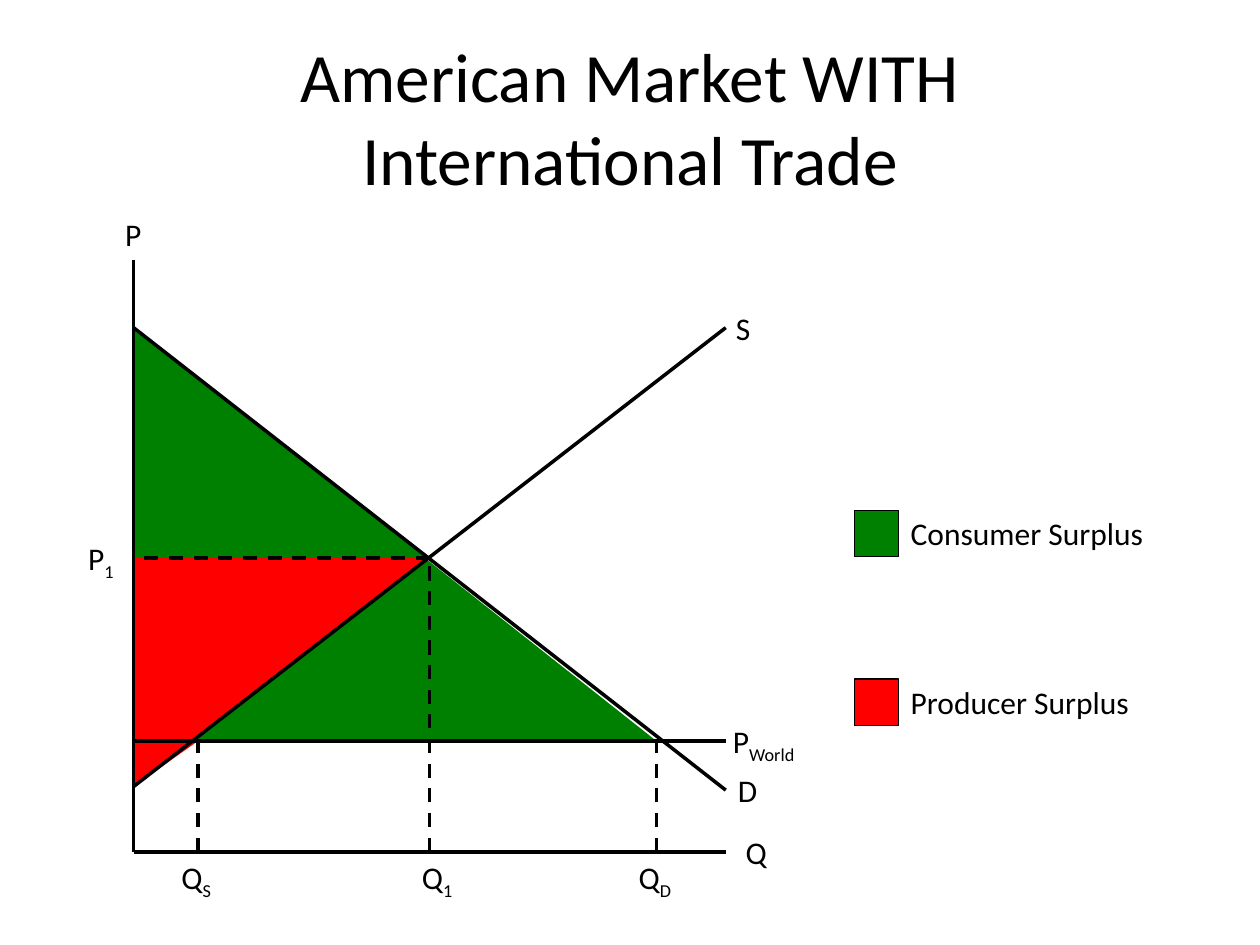
from dataclasses import dataclass

from lxml import etree
from pptx import Presentation
from pptx.dml.color import RGBColor
from pptx.enum.dml import MSO_LINE
from pptx.enum.shapes import MSO_CONNECTOR, MSO_SHAPE
from pptx.enum.text import MSO_ANCHOR, MSO_AUTO_SIZE, PP_ALIGN
from pptx.oxml.ns import qn
from pptx.util import Inches, Pt

RIGHT_TRIANGLE = MSO_SHAPE.RIGHT_TRIANGLE
RECTANGLE = MSO_SHAPE.RECTANGLE
STRAIGHT = MSO_CONNECTOR.STRAIGHT
DASH = MSO_LINE.DASH
MIDDLE = MSO_ANCHOR.MIDDLE
CENTER = PP_ALIGN.CENTER
FIT_SHAPE = MSO_AUTO_SIZE.SHAPE_TO_FIT_TEXT
TITLE_ONLY = 5


@dataclass(frozen=True)
class Theme:
    ink: RGBColor = RGBColor(0, 0, 0)
    consumer: RGBColor = RGBColor(0, 128, 0)
    producer: RGBColor = RGBColor(255, 0, 0)
    font: str = "Calibri"
    title_size: float = 39.6
    label_size: float = 18
    curve_width: float = 2
    border_width: float = 0.75
    label_height: float = 0.4


THEME = Theme()


@dataclass(frozen=True)
class Box:
    left: float
    top: float
    width: float
    height: float

    def point(self, quantity, price):
        return self.left + quantity * self.width, self.top + (1 - price) * self.height

    def emu(self):
        return [Inches(value) for value in (self.left, self.top, self.width, self.height)]


def add_run(paragraph, text, size, subscript=False):
    run = paragraph.add_run()
    run.text = text
    run.font.name = THEME.font
    run.font.size = Pt(size)
    run.font.color.rgb = THEME.ink
    if subscript:
        run.font._element.set("baseline", "-25000")


def add_label(slide, box, text, subscript=""):
    frame = slide.shapes.add_textbox(*box.emu()).text_frame
    frame.word_wrap = False
    frame.auto_size = FIT_SHAPE
    paragraph = frame.paragraphs[0]
    add_run(paragraph, text, THEME.label_size)
    if subscript:
        add_run(paragraph, subscript, THEME.label_size, subscript=True)


def add_filled(slide, kind, box, color, border=False):
    shape = slide.shapes.add_shape(kind, *box.emu())
    shape.shadow.inherit = False
    shape.fill.solid()
    shape.fill.fore_color.rgb = color
    if border:
        shape.line.color.rgb = THEME.ink
        shape.line.width = Pt(THEME.border_width)
    else:
        shape.line.fill.background()
    return shape


def add_title(slide, box, lines):
    title = slide.shapes.title
    title.left, title.top, title.width, title.height = box.emu()
    title.text_frame.vertical_anchor = MIDDLE
    paragraph = title.text_frame.paragraphs[0]
    paragraph.alignment = CENTER
    for index, line in enumerate(lines):
        if index:
            paragraph.add_line_break()
        add_run(paragraph, line, THEME.title_size)


def add_market(slide, plot):
    low, high, middle, world = 0.11, 0.885, 0.496, 0.187
    supplied, demanded, traded = 0.109, 0.883, 0.5

    def surplus(corner_price, far_price, quantity, color):
        left, top = plot.point(0, max(corner_price, far_price))
        height = abs(corner_price - far_price) * plot.height
        box = Box(left, top, quantity * plot.width, height)
        triangle = add_filled(slide, RIGHT_TRIANGLE, box, color)
        if corner_price > far_price:
            triangle._element.spPr.find(qn("a:xfrm")).set("flipV", "1")

    def line(start, end, dashed=False):
        ends = [Inches(value) for value in plot.point(*start) + plot.point(*end)]
        connector = slide.shapes.add_connector(STRAIGHT, *ends)
        connector.line.color.rgb = THEME.ink
        connector.line.width = Pt(THEME.curve_width)
        if dashed:
            connector.line.dash_style = DASH
        etree.SubElement(connector._element.spPr, qn("a:effectLst"))

    def label(quantity, price, width, text, subscript=""):
        x, y = plot.point(quantity, price)
        height = THEME.label_height
        add_label(slide, Box(x - width / 2, y - height / 2, width, height), text, subscript)

    surplus(world, high, demanded, THEME.consumer)
    surplus(middle, low, traded, THEME.producer)
    surplus(world, low, supplied, THEME.producer)
    surplus(middle, high, traded, THEME.consumer)

    line((0, 1), (0, 0))
    line((1, 0), (0, 0))
    line((1, high), (0, low))
    line((1, 0.104), (0, high))
    line((1, world), (0, world))
    line((traded, middle), (0, middle), dashed=True)
    for quantity, price in ((traded, middle), (supplied, world), (demanded, world)):
        line((quantity, 0), (quantity, price), dashed=True)

    below = -0.043
    label(1.052, 0, 0.37, "Q")
    label(0, 1.043, 0.33, "P")
    label(1.038, 0.104, 0.36, "D")
    label(1.03, high, 0.32, "S")
    label(0.515, below, 0.46, "Q", "1")
    label(-0.053, middle, 0.42, "P", "1")
    label(1.072, world, 0.76, "P", "World")
    label(supplied, below, 0.46, "Q", "S")
    label(demanded, below, 0.48, "Q", "D")


def add_legend(slide, box, entries):
    swatch_width, swatch_height = 0.35, 0.37
    step = (box.height - swatch_height) / (len(entries) - 1)
    for index, (text, color) in enumerate(entries):
        top = box.top + index * step
        swatch = Box(box.left, top, swatch_width, swatch_height)
        add_filled(slide, RECTANGLE, swatch, color, border=True)
        text_box = Box(box.left + swatch_width, top - 0.02,
                       box.width - swatch_width, THEME.label_height)
        add_label(slide, text_box, text)


def main():
    presentation = Presentation()
    presentation.slide_width = Inches(10)
    presentation.slide_height = Inches(7.5)
    slide = presentation.slides.add_slide(presentation.slide_layouts[TITLE_ONLY])
    add_title(slide, Box(0.5, 0.3, 9, 1.25), ["American Market WITH", "International Trade"])
    add_market(slide, Box(1.06, 2.06, 4.7, 4.7))
    add_legend(slide, Box(6.78, 4.05, 2.42, 1.71), [
        ("Consumer Surplus", THEME.consumer),
        ("Producer Surplus", THEME.producer),
    ])
    presentation.save("out.pptx")


if __name__ == "__main__":
    main()
